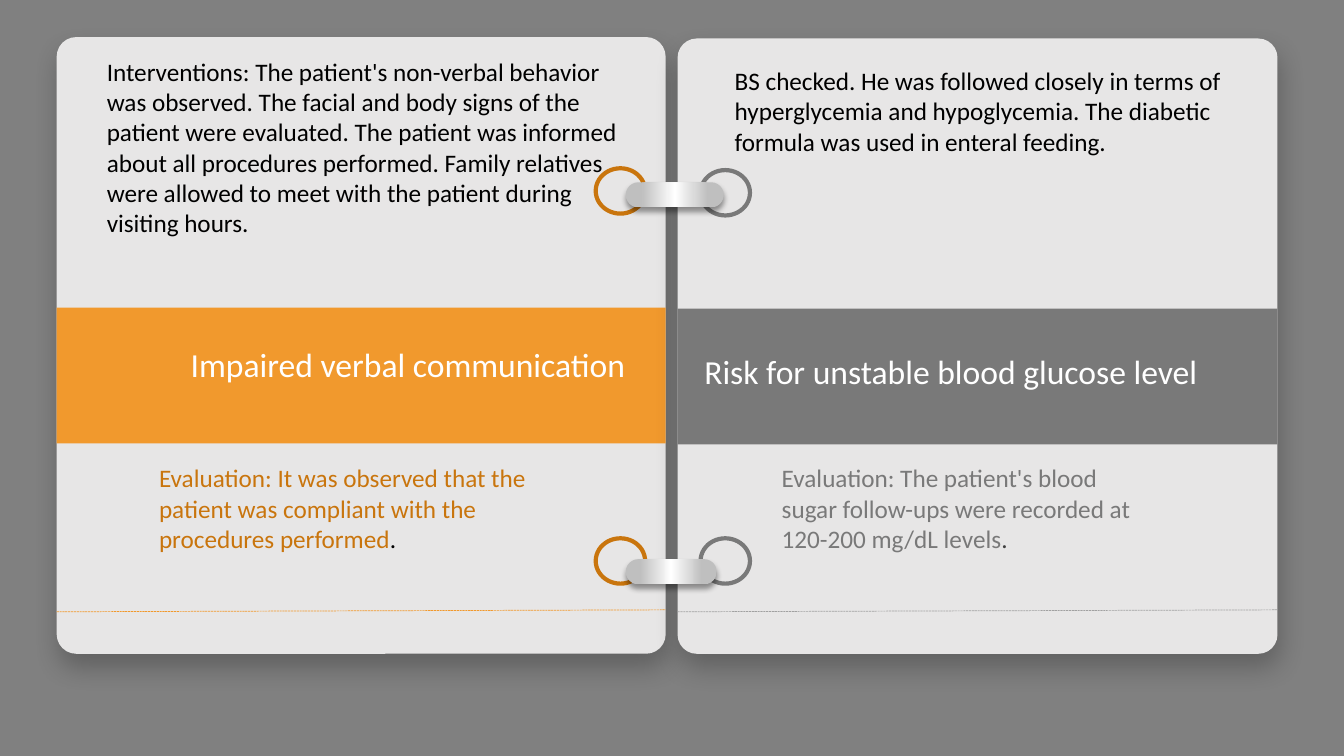
from pptx import Presentation
from pptx.dml.color import RGBColor
from pptx.enum.dml import MSO_LINE
from pptx.enum.shapes import MSO_CONNECTOR, MSO_SHAPE
from pptx.enum.text import MSO_ANCHOR, MSO_AUTO_SIZE, PP_ALIGN
from pptx.oxml import parse_xml
from pptx.oxml.ns import qn
from pptx.util import Pt

ROUND, RECT, OVAL = MSO_SHAPE.ROUNDED_RECTANGLE, MSO_SHAPE.RECTANGLE, MSO_SHAPE.OVAL
STRAIGHT, DASH = MSO_CONNECTOR.STRAIGHT, MSO_LINE.SQUARE_DOT
LEFT, TOP, FIXED = PP_ALIGN.LEFT, MSO_ANCHOR.TOP, MSO_AUTO_SIZE.NONE
NS = 'xmlns:a="http://schemas.openxmlformats.org/drawingml/2006/main"'
HEX = {
    "back": "808080", "card": "E7E6E6", "orange": "F1992D", "rust": "C9750D",
    "gray": "797979", "rule": "A1A1A1", "steel": "BFBFBF", "white": "FFFFFF",
    "black": "000000", "dark": "404040",
}
RGB = {name: RGBColor.from_string(code) for name, code in HEX.items()}

deck = Presentation()
deck.slide_width, deck.slide_height = Pt(960), Pt(540)
slide = deck.slides.add_slide(deck.slide_layouts[5])
slide.background.fill.solid()
slide.background.fill.fore_color.rgb = RGB["back"]
shapes = slide.shapes


def add_part(kind, box, fill=None, edge=None, shade=None):
    """Add a shape; shade is opacity %, blur, distance and angle."""
    part = shapes.add_shape(kind, *map(Pt, box))
    part.shadow.inherit = False
    if fill:
        part.fill.solid()
        part.fill.fore_color.rgb = RGB[fill]
    if edge:
        part.line.color.rgb = RGB[edge]
        part.line.width = Pt(3)
    else:
        part.line.fill.background()
    if shade:
        alpha, blur, dist, angle = shade
        part._element.spPr.find(qn("a:effectLst")).append(parse_xml(
            f'<a:outerShdw {NS} blurRad="{Pt(blur)}" dist="{Pt(dist)}" '
            f'dir="{angle * 60000}" algn="t" rotWithShape="0">'
            f'<a:srgbClr val="{HEX["black"]}"><a:alpha val="{alpha * 1000}"/>'
            '</a:srgbClr></a:outerShdw>'))
    return part


def write(item, box, size, paras):
    """Place a text holder and fill it with (text, colour) runs."""
    item.left, item.top, item.width, item.height = map(Pt, box)
    frame = item.text_frame
    frame.word_wrap, frame.auto_size = True, FIXED
    frame.vertical_anchor = TOP
    for i, runs in enumerate(paras):
        para = frame.add_paragraph() if i else frame.paragraphs[0]
        para.alignment = LEFT
        for text, tone in runs:
            run = para.add_run()
            run.text = text
            run.font.name, run.font.size = "Calibri", Pt(size)
            run.font.color.rgb = RGB[tone]


# Cards: left, top, width, height, band top, band, rule, ring, ring left, ring tops
cards = [
    (40.5, 26.5, 435, 440.5, 219.8, "orange", "orange", "rust", 425.5, (120.2, 384.5)),
    (484, 27.5, 428.5, 439.5, 220.5, "gray", "rule", "gray", 500.4, (121.5, 384.5)),
]
for x, y, wide, high, mid, band, rule, ring, hoop, tops in cards:
    card = add_part(ROUND, (x, y, wide, high), "card", shade=(24, 19, 10, 80))
    card.adjustments[0] = 0.032
    add_part(RECT, (x, mid, wide, 97), band)
    line = shapes.add_connector(STRAIGHT, Pt(x), Pt(437), Pt(x + wide), Pt(435.6))
    line.line.color.rgb = RGB[rule]
    line.line.width, line.line.dash_style = Pt(0.5), DASH
    line._element.spPr.append(parse_xml(f"<a:effectLst {NS}/>"))
    for top in tops:
        add_part(OVAL, (hoop, top, 35.3, 32.4), "card", ring)

# Metal clasps across the gap
stops = "".join(
    f'<a:gs pos="{pos * 1000}"><a:srgbClr val="{HEX[tone]}"/></a:gs>'
    for pos, tone in [(16, "steel"), (50, "white"), (84, "steel")])
for top, wide in [(130.2, 70), (399.4, 65)]:
    clasp = add_part(ROUND, (447, top, wide, 18), shade=(40, 4, 3, 90))
    clasp.adjustments[0] = 0.5
    clasp._element.spPr.insert(2, parse_xml(
        f'<a:gradFill {NS} rotWithShape="1"><a:gsLst>{stops}</a:gsLst>'
        '<a:lin ang="0" scaled="0"/></a:gradFill>'))

# Left heading is the slide title, raised above its band
title = shapes.title
shapes._spTree.append(title._element)
write(title, (129, 242, 353, 36), 24, [[("Impaired verbal communication", "white")]])

# Other texts: box, size, paragraphs
texts = [
    ((496, 247, 405, 36), 24, [[("Risk for unstable blood glucose level", "white")]]),
    ((517.7, 43.2, 411, 73), 18, [[(
        "BS checked. He was followed closely in terms of hyperglycemia and "
        "hypoglycemia. The diabetic formula was used in enteral feeding.", "black")]]),
    ((551.3, 327, 283, 73), 18, [
        [("Evaluation: The patient's blood sugar follow-ups were recorded at", "gray")],
        [("120-200 mg/dL levels", "gray"), (".", "dark")]]),
    ((69.2, 36.7, 388, 138), 18, [[(
        "Interventions: The patient's non-verbal behavior was observed. The facial "
        "and body signs of the patient were evaluated. The patient was informed "
        "about all procedures performed. Family relatives were allowed to meet "
        "with the patient during visiting hours.", "black")]]),
    ((106.5, 327, 295, 73), 18, [
        [("Evaluation: It was observed that the patient was compliant with the", "rust")],
        [("procedures performed", "rust"), (".", "black")]]),
]
for box, size, paras in texts:
    write(shapes.add_textbox(*map(Pt, box)), box, size, paras)

deck.save("out.pptx")
